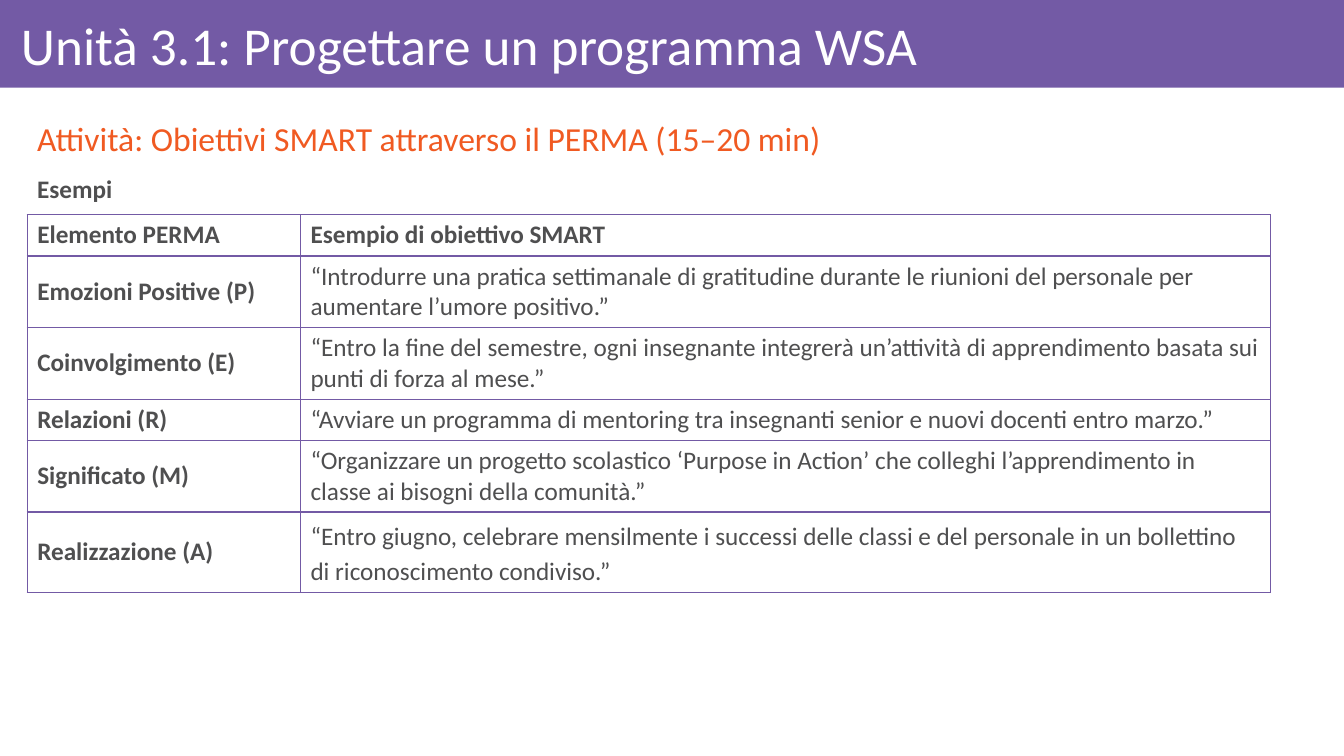
from lxml.etree import SubElement
from pptx import Presentation
from pptx.dml.color import RGBColor
from pptx.enum.shapes import MSO_SHAPE as Shape
from pptx.enum.text import MSO_ANCHOR as Anchor, PP_ALIGN as Align
from pptx.oxml.ns import qn
from pptx.util import Inches, Pt

PURPLE, ORANGE, GREY, WHITE = "735AA5", "F05A22", "4F4F50", "FFFFFF"
LINE_HEIGHT, CELL_PADDING = 0.305, 0.1

# Goal for each PERMA element, with the number of lines it takes
GOALS = [
    ("Elemento PERMA", "Esempio di obiettivo SMART", 1),
    ("Emozioni Positive (P)",
     "“Introdurre una pratica settimanale di gratitudine durante le riunioni "
     "del personale per aumentare l’umore positivo.”", 2),
    ("Coinvolgimento (E)",
     "“Entro la fine del semestre, ogni insegnante integrerà un’attività di "
     "apprendimento basata sui punti di forza al mese.”", 2),
    ("Relazioni (R)",
     "“Avviare un programma di mentoring tra insegnanti senior e nuovi docenti "
     "entro marzo.”", 1),
    ("Significato (M)",
     "“Organizzare un progetto scolastico ‘Purpose in Action’ che colleghi "
     "l’apprendimento in classe ai bisogni della comunità.”", 2),
    ("Realizzazione (A)",
     "“Entro giugno, celebrare mensilmente i successi delle classi e del "
     "personale in un bollettino di riconoscimento condiviso.”", 2),
]


def rgb(value):
    return RGBColor.from_string(value)


class SlideBuilder:
    font = "Calibri"

    def __init__(self, slide):
        self.slide = slide

    def band(self, left, top, width, height, color):
        band = self.slide.shapes.add_shape(
            Shape.RECTANGLE, Inches(left), Inches(top), Inches(width), Inches(height))
        band.shadow.inherit = False
        band.fill.solid()
        band.fill.fore_color.rgb = rgb(color)
        band.line.fill.background()

    def set_text(self, frame, text, size, color, bold=False):
        frame.text = text
        paragraph = frame.paragraphs[0]
        for run in paragraph.runs:
            run.font.name = self.font
            run.font.size = Pt(size)
            run.font.bold = bold
            run.font.color.rgb = rgb(color)
        return paragraph

    def text(self, left, top, width, height, text, size, color,
             bold=False, anchor=Anchor.MIDDLE):
        frame = self.slide.shapes.add_textbox(
            Inches(left), Inches(top), Inches(width), Inches(height)).text_frame
        frame.word_wrap = True
        frame.vertical_anchor = anchor
        return self.set_text(frame, text, size, color, bold)

    def border(self, cell, color):
        properties = cell._tc.get_or_add_tcPr()
        for side in ("a:lnL", "a:lnR", "a:lnT", "a:lnB"):
            line = SubElement(properties, qn(side), w=str(Pt(1)))
            SubElement(SubElement(line, qn("a:solidFill")), qn("a:srgbClr"), val=color)

    def table(self, left, top, widths, heights, rows):
        table = self.slide.shapes.add_table(
            len(rows), len(widths), Inches(left), Inches(top),
            Inches(sum(widths)), Inches(sum(heights))).table
        table.first_row = table.horz_banding = False
        for column, width in zip(table.columns, widths):
            column.width = Inches(width)
        for row, height, texts in zip(table.rows, heights, rows):
            row.height = Inches(height)
            for index, (cell, text) in enumerate(zip(row.cells, texts)):
                self.border(cell, PURPLE)
                cell.fill.background()
                cell.vertical_anchor = Anchor.MIDDLE
                bold = index == 0 or texts is rows[0]
                self.set_text(cell.text_frame, text, 18, GREY, bold)
        return table


def main():
    deck = Presentation()
    deck.slide_width, deck.slide_height = Inches(13.33), Inches(7.5)
    builder = SlideBuilder(deck.slides.add_slide(deck.slide_layouts[6]))

    # Title band
    builder.band(0, 0, 13.33, 0.87, PURPLE)
    title = builder.text(0.11, 0.09, 13.06, 0.78,
                         "Unità 3.1: Progettare un programma WSA", 38, WHITE)
    title.line_spacing = 0.9

    # Activity heading
    activity = builder.text(0.27, 1.1, 13.06, 0.6,
                            "Attività: Obiettivi SMART attraverso il PERMA (15–20 min)",
                            24, ORANGE)
    activity.alignment = Align.JUSTIFY
    activity.line_spacing = 0.9

    # Examples
    heights = [round(lines * LINE_HEIGHT + CELL_PADDING, 2) for *_, lines in GOALS]
    heights[-1] = 0.8
    goals = builder.table(0.27, 2.13, [2.71, 9.62], heights,
                          [goal[:2] for goal in GOALS])
    achievement = goals.cell(len(GOALS) - 1, 1).text_frame.paragraphs[0]
    achievement.line_spacing = 1.15
    achievement.space_before = achievement.space_after = Pt(12)
    builder.text(0.27, 1.67, 6.73, 0.4, "Esempi", 18, GREY, bold=True, anchor=Anchor.TOP)

    deck.save("out.pptx")


if __name__ == "__main__":
    main()
